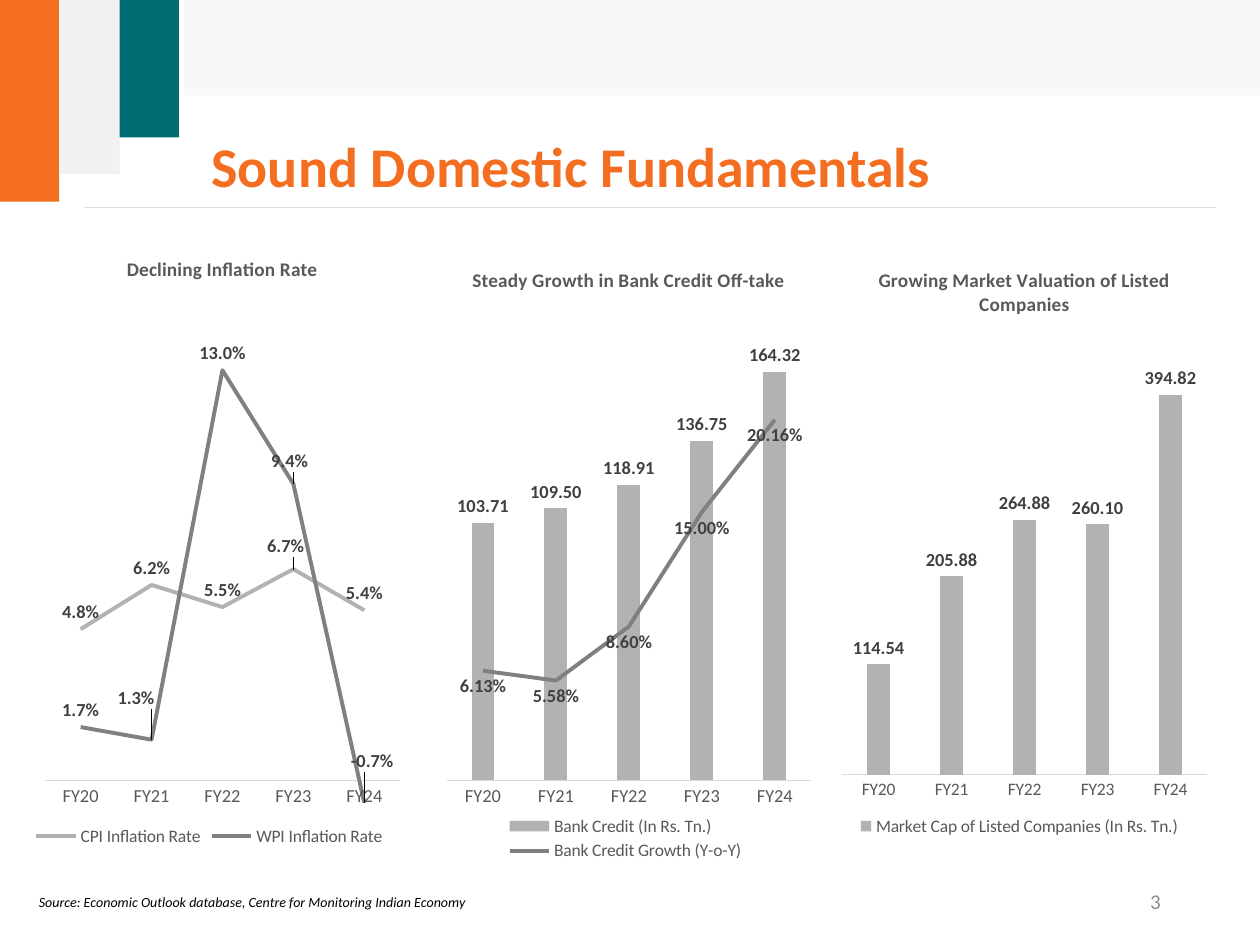
"""Build the Sound Domestic Fundamentals slide with three charts."""
from lxml import etree
from pptx import Presentation
from pptx.chart.data import CategoryChartData
from pptx.dml.color import RGBColor
from pptx.enum.chart import XL_CHART_TYPE, XL_LABEL_POSITION, XL_LEGEND_POSITION, XL_MARKER_STYLE
from pptx.enum.chart import XL_TICK_LABEL_POSITION, XL_TICK_MARK
from pptx.enum.shapes import MSO_CONNECTOR, MSO_SHAPE
from pptx.enum.text import MSO_ANCHOR, PP_ALIGN
from pptx.oxml import parse_xml
from pptx.oxml.ns import nsdecls, qn
from pptx.util import Inches, Pt


def rgb(value):
    return RGBColor.from_string(value)


def style(font, size, color, **fmt):
    for name, value in dict(fmt, name="Calibri", size=Pt(size)).items():
        setattr(font, name, value)
    font.color.rgb = rgb(color)


prs = Presentation()
prs.slide_width, prs.slide_height = Inches(10), Inches(7.5)
s = prs.slides.add_slide(prs.slide_layouts[6])

for x, w, h, color in [(1.46, 8.54, 0.76, "F8F8F8"), (0, 0.47, 1.6, "F36E20"),
                       (0.48, 0.47, 1.38, "F1F1F2"), (0.95, 0.47, 1.09, "006D75")]:
    sp = s.shapes.add_shape(MSO_SHAPE.RECTANGLE, Inches(x), 0, Inches(w), Inches(h))
    sp.shadow.inherit = False
    sp.fill.solid()
    sp.fill.fore_color.rgb = rgb(color)
    sp.line.fill.background()

rule = s.shapes.add_connector(MSO_CONNECTOR.STRAIGHT, Inches(0.67), Inches(1.65), Inches(9.65), Inches(1.65))
rule.line.color.rgb = rgb("DDDDDD")
rule.line.width = Pt(0.5)
etree.SubElement(rule._element.spPr, qn("a:effectLst"))

SOURCE = "Source: Economic Outlook database, Centre for Monitoring Indian Economy"
for text, box, anchor, align, size, color, fmt in [
    ("Sound Domestic Fundamentals", (1.58, 0.84, 7.73, 1.01), MSO_ANCHOR.MIDDLE, PP_ALIGN.LEFT,
     32, "F36E20", {"bold": True}),
    ("3", (7.06, 6.95, 2.25, 0.4), MSO_ANCHOR.MIDDLE, PP_ALIGN.RIGHT, 12, "8C8C8C", {}),
    (SOURCE, (0.21, 7.04, 8.83, 0.24), MSO_ANCHOR.TOP, PP_ALIGN.LEFT, 8, "000000", {"italic": True}),
]:
    tf = s.shapes.add_textbox(*map(Inches, box)).text_frame
    tf.word_wrap = True
    tf.vertical_anchor = anchor
    p = tf.paragraphs[0]
    p.alignment = align
    p.line_spacing = 0.9 if size == 32 else 1.0
    r = p.add_run()
    r.text = text
    style(r.font, size, color, **fmt)

LINE, BAR = XL_CHART_TYPE.LINE, XL_CHART_TYPE.COLUMN_CLUSTERED
ABOVE, BELOW, OUTSIDE = XL_LABEL_POSITION.ABOVE, XL_LABEL_POSITION.BELOW, XL_LABEL_POSITION.OUTSIDE_END
charts = [
    {"title": "Declining Inflation Rate", "type": LINE, "at": (0.21, 1.85, 3.11, 5.02), "legend": (0.01, 0.93),
     "plot": (0.048, 0.167, 0.905, 0.799), "scale": (-0.02, 0.14), "right": (-0.02, 0.14), "size": 10.5,
     "series": [("CPI Inflation Rate", (0.048, 0.062, 0.055, 0.067, 0.054), "0.0%", ABOVE,
                 {3: (-0.02, -0.01)}),
                ("WPI Inflation Rate", (0.017, 0.013, 0.13, 0.094, -0.007), "0.0%", ABOVE,
                 {1: (-0.04, -0.04), 3: (-0.01, -0.01), 4: (0.02, -0.04)})]},
    {"title": "Steady Growth in Bank Credit Off-take", "type": BAR, "at": (3.39, 1.94, 3.2, 5),
     "legend": (0.19, 0.9),
     "plot": (0.048, 0.141, 0.905, 0.71), "scale": (0, 180), "right": (0, 0.25), "size": 10.5,
     "series": [("Bank Credit (In Rs. Tn.)", (103.71, 109.5, 118.91, 136.75, 164.32), "0.00", OUTSIDE, {}),
                ("Bank Credit Growth (Y-o-Y)", (0.0613, 0.0558, 0.086, 0.15, 0.2016), "0.00%", BELOW, {})]},
    {"title": "Growing Market Valuation of Listed Companies", "type": BAR, "at": (6.53, 1.94, 3.2, 5),
     "legend": (0.08, 0.9),
     "plot": (0.048, 0.154, 0.905, 0.688), "scale": (0, 450), "right": None, "size": 10,
     "series": [("Market Cap of Listed Companies (In Rs. Tn.)", (114.54, 205.88, 264.88, 260.1, 394.82),
                 "0.00", OUTSIDE, {})]},
]

for c in charts:
    cd = CategoryChartData()
    cd.categories = [f"FY{year}" for year in range(20, 25)]
    for name, values, number_format, *_ in c["series"]:
        cd.add_series(name, values, number_format)
    chart = s.shapes.add_chart(c["type"], *map(Inches, c["at"]), cd).chart
    style(chart.font, c["size"], "000000")

    chart.has_title = True
    p = chart.chart_title.text_frame.paragraphs[0]
    r = p.add_run()
    r.text = c["title"]
    style(r.font, 11, "595959", bold=True)
    chart.chart_title.include_in_layout = False
    chart.has_legend = True
    chart.legend.position = XL_LEGEND_POSITION.BOTTOM
    chart.legend.include_in_layout = False
    style(chart.legend.font, 10, "595959")
    x, y = c["legend"]
    legend = chart.legend._element
    for layout in legend.findall(qn("c:layout")):
        legend.remove(layout)
    legend.find(qn("c:legendPos")).addnext(parse_xml(
        f'<c:layout {nsdecls("c")}><c:manualLayout><c:xMode val="edge"/><c:yMode val="edge"/>'
        f'<c:x val="{x}"/><c:y val="{y}"/></c:manualLayout></c:layout>'))

    ca, va = chart.category_axis, chart.value_axis
    for axis in (ca, va):
        axis.has_major_gridlines = False
        axis.major_tick_mark = axis.minor_tick_mark = XL_TICK_MARK.NONE
        style(axis.tick_labels.font, c["size"], "595959")
    ca.format.line.color.rgb = rgb("D9D9D9")
    ca.format.line.width = Pt(0.75)
    va.format.line.fill.background()
    va.tick_label_position = XL_TICK_LABEL_POSITION.NONE
    va.minimum_scale, va.maximum_scale = c["scale"]
    if c["type"] == BAR:
        chart.plots[0].gap_width, chart.plots[0].overlap = 219, -27
        chart.plots[0].vary_by_categories = False

    area = chart._chartSpace.chart.plotArea
    for layout in area.findall(qn("c:layout")):
        area.remove(layout)
    x, y, w, h = c["plot"]
    area.insert(0, parse_xml(
        f'<c:layout {nsdecls("c")}><c:manualLayout><c:layoutTarget val="inner"/><c:xMode val="edge"/>'
        f'<c:yMode val="edge"/><c:x val="{x}"/><c:y val="{y}"/><c:w val="{w}"/><c:h val="{h}"/>'
        '</c:manualLayout></c:layout>'))

    if c["right"]:
        low, high = c["right"]
        ser = area.findall(".//" + qn("c:ser"))[1]
        for tag in ser.findall(qn("c:invertIfNegative")):
            ser.remove(tag)
        line_plot = parse_xml(
            f'<c:lineChart {nsdecls("c")}><c:grouping val="standard"/><c:varyColors val="0"/>'
            '<c:marker val="1"/><c:axId val="501"/><c:axId val="502"/></c:lineChart>')
        line_plot.insert(2, ser)
        area[1].addnext(line_plot)
        hidden_line = '<c:spPr><a:ln><a:noFill/></a:ln></c:spPr>'
        for kind, own, other, side, limits, deleted, crosses in [
            ("valAx", 502, 501, "r", f'<c:max val="{high}"/><c:min val="{low}"/>', 0, "max"),
            ("catAx", 501, 502, "b", "", 1, "autoZero"),
        ]:
            area.findall(qn("c:valAx"))[-1].addnext(parse_xml(
                f'<c:{kind} {nsdecls("c", "a")}><c:axId val="{own}"/><c:scaling>'
                f'<c:orientation val="minMax"/>{limits}</c:scaling><c:delete val="{deleted}"/>'
                f'<c:axPos val="{side}"/><c:majorTickMark val="none"/><c:minorTickMark val="none"/>'
                f'<c:tickLblPos val="none"/>{hidden_line}<c:crossAx val="{other}"/>'
                f'<c:crosses val="{crosses}"/></c:{kind}>'))

    all_series = [ser for plot in chart.plots for ser in plot.series]
    for ser, color, (_, _, number_format, position, shifts) in zip(all_series, ("B2B2B2", "808080"), c["series"]):
        if ser._element.getparent().tag == qn("c:lineChart"):
            ser.smooth = False
            ser.marker.style = XL_MARKER_STYLE.NONE
            ser.format.line.color.rgb = rgb(color)
            ser.format.line.width = Pt(2.25)
        else:
            ser.format.fill.solid()
            ser.format.fill.fore_color.rgb = rgb(color)
        dl = ser.data_labels
        for name, value in {"show_value": True, "number_format": number_format,
                            "number_format_is_linked": False, "position": position}.items():
            setattr(dl, name, value)
        style(dl.font, 10.5, "404040", bold=True)
        for i, (dx, dy) in shifts.items():
            label = ser.points[i].data_label
            style(label.font, 10.5, "404040", bold=True)
            label.position = position
            idx = ser._element.xpath(f"c:dLbls/c:dLbl/c:idx[@val='{i}']")[0]
            idx.addnext(parse_xml(
                f'<c:layout {nsdecls("c")}><c:manualLayout><c:x val="{dx}"/><c:y val="{dy}"/>'
                '</c:manualLayout></c:layout>'))
        if shifts:
            dl._element.xpath("c:showLeaderLines") and dl._element.remove(dl._element.xpath("c:showLeaderLines")[0])
            dl._element.append(parse_xml(
                f'<c:extLst {nsdecls("c")}><c:ext uri="{{CE6537A1-D6FC-4f65-9D91-7224C49458BB}}" '
                'xmlns:c15="http://schemas.microsoft.com/office/drawing/2012/chart">'
                '<c15:showLeaderLines val="0"/></c:ext></c:extLst>'))

prs.save("out.pptx")
